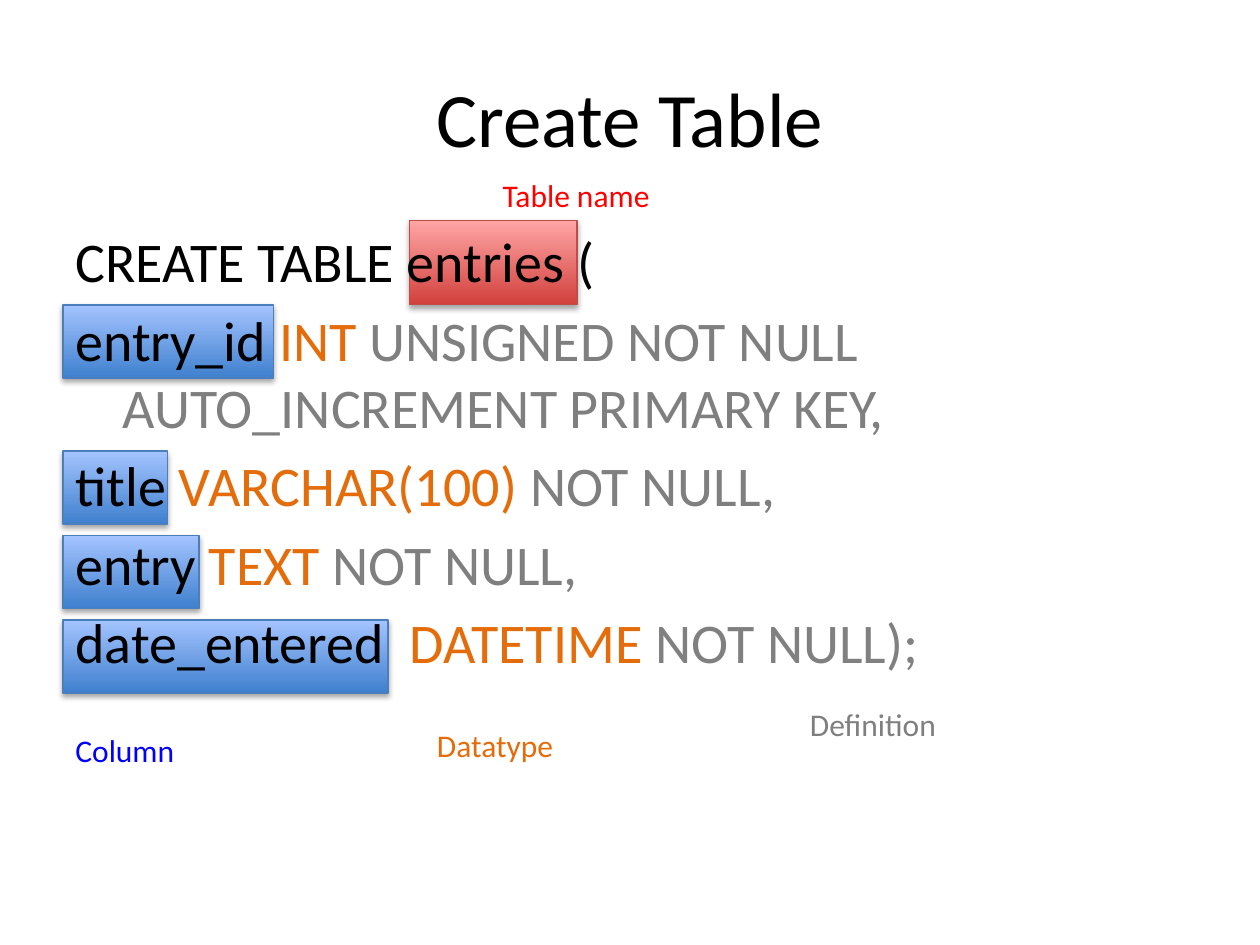
from lxml import etree
from pptx import Presentation
from pptx.dml.color import RGBColor
from pptx.enum.shapes import MSO_SHAPE
from pptx.enum.text import MSO_ANCHOR, MSO_AUTO_SIZE, PP_ALIGN
from pptx.oxml.ns import qn
from pptx.util import Pt

RECT = MSO_SHAPE.RECTANGLE
MIDDLE, TOP = MSO_ANCHOR.MIDDLE, MSO_ANCHOR.TOP
LEFT, CENTER = PP_ALIGN.LEFT, PP_ALIGN.CENTER
FIT, FIXED = MSO_AUTO_SIZE.SHAPE_TO_FIT_TEXT, MSO_AUTO_SIZE.NONE

PX = 9144
HANG = 37.5
COLORS = {
    "black": "000000", "red": "FF0000", "blue": "0000FF",
    "orange": "E46C0A", "gray": "7F7F7F", "ash": "808080",
}
BOXES = {
    "column": ("3F80CE", "A4C4FF", "4B7EBC"),
    "table": ("D1403C", "FFA6A5", "BF4C48"),
}


def assign(item, values):
    for name, value in values.items():
        setattr(item, name, value)


class Page:
    font = "Calibri"

    def __init__(self, deck):
        self.slide = deck.slides.add_slide(deck.slide_layouts[6])

    def box(self, place, kind):
        dark, light, edge = BOXES[kind]
        shape = self.slide.shapes.add_shape(RECT, *[n * PX for n in place])
        shape.fill.gradient()
        shape.fill.gradient_angle = 90
        for stop, color in zip(shape.fill.gradient_stops, (dark, light)):
            stop.color.rgb = RGBColor.from_string(color)
        shape.line.width = Pt(0.75)
        shape.line.color.rgb = RGBColor.from_string(edge)
        self.shade(shape)

    def shade(self, shape):
        shape.shadow.inherit = False
        effects = shape._element.spPr.find(qn("a:effectLst"))
        outer = etree.SubElement(
            effects, qn("a:outerShdw"), blurRad="40000", dist="23000",
            dir="5400000", rotWithShape="0")
        color = etree.SubElement(outer, qn("a:srgbClr"), val=COLORS["black"])
        etree.SubElement(color, qn("a:alpha"), val="35000")

    def text(self, place, lines, size, align=LEFT, hang=0, gap=0, **look):
        box = self.slide.shapes.add_textbox(*[n * PX for n in place])
        frame = box.text_frame
        assign(frame, {"word_wrap": True, "auto_size": FIXED,
                       "vertical_anchor": TOP} | look)
        for i, runs in enumerate(lines):
            para = frame.add_paragraph() if i else frame.paragraphs[0]
            assign(para, {"alignment": align, "space_before": Pt(gap)})
            if hang:
                props = para._p.get_or_add_pPr()
                props.set("marL", str(int(hang * PX)))
                props.set("indent", str(int(-hang * PX)))
            for words, color in runs:
                run = para.add_run()
                run.text = words
                assign(run.font, {"name": self.font, "size": Pt(size)})
                run.font.color.rgb = RGBColor.from_string(COLORS[color])

    def label(self, place, words, color):
        self.text(place, [[(words, color)]], 18, word_wrap=False, auto_size=FIT)


def main():
    deck = Presentation()
    assign(deck, {"slide_width": 1000 * PX, "slide_height": 750 * PX})
    page = Page(deck)

    for top, width in ((242, 167), (358, 83), (425, 108), (492, 258)):
        page.box((50, top, width, 58), "column")
    page.box((325, 175, 133, 67), "table")

    page.text((50, 30, 900, 125), [[("Create Table", "black")]], 44,
              align=CENTER, vertical_anchor=MIDDLE)
    query = [
        [("CREATE TABLE entries (", "black")],
        [("entry_id ", "black"), ("INT ", "orange"),
         ("UNSIGNED NOT NULL AUTO_INCREMENT PRIMARY KEY,", "gray")],
        [("title ", "black"), ("VARCHAR(100) ", "orange"), ("NOT NULL,", "gray")],
        [("entry ", "black"), ("TEXT", "orange"), (" NOT NULL,", "gray")],
        [("date_entered  ", "black"), ("DATETIME", "orange"),
         (" NOT NULL);", "ash")],
    ]
    page.text((50, 175, 900, 495), query, 32, hang=HANG, gap=6.4)

    page.label((389, 135, 138, 40), "Table name", "red")
    page.label((50, 575, 99, 40), "Column", "blue")
    page.label((633, 555, 121, 40), "Definition", "gray")
    page.label((337, 571, 113, 40), "Datatype", "orange")
    deck.save("out.pptx")


if __name__ == "__main__":
    main()
